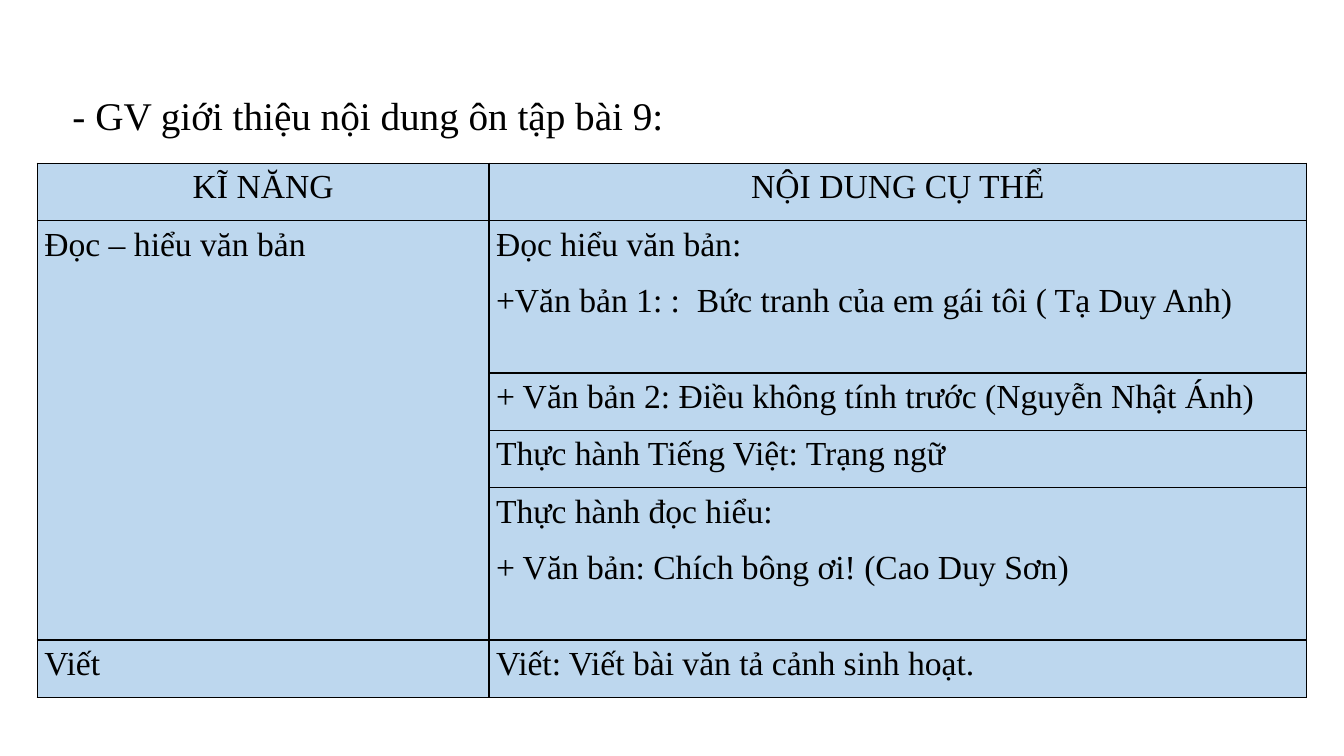
from lxml import etree
from pptx import Presentation
from pptx.dml.color import RGBColor
from pptx.enum.text import MSO_AUTO_SIZE, PP_ALIGN
from pptx.oxml.ns import qn
from pptx.util import Inches, Pt

CENTER, JUSTIFY, LEFT = PP_ALIGN.CENTER, PP_ALIGN.JUSTIFY, PP_ALIGN.LEFT
BLACK = RGBColor(0x00, 0x00, 0x00)
LIGHT_BLUE = RGBColor(0xBD, 0xD7, 0xEE)

COLUMN_WIDTHS = [4.48, 8.11]
ROW_HEIGHTS = [0.57, 1.51, 0.57, 0.57, 1.51, 0.57]
REVIEW_ROWS = [
    ([("KĨ NĂNG", CENTER)], [("NỘI DUNG CỤ THỂ", CENTER)]),
    (
        [("Đọc – hiểu văn bản", JUSTIFY)],
        [
            ("Đọc hiểu văn bản: ", JUSTIFY),
            ("+Văn bản 1: :  Bức tranh của em gái tôi ( Tạ Duy Anh)", LEFT),
        ],
    ),
    ([], [("+ Văn bản 2: Điều không tính trước (Nguyễn Nhật Ánh)", LEFT)]),
    ([], [("Thực hành Tiếng Việt: Trạng ngữ", JUSTIFY)]),
    (
        [],
        [
            ("Thực hành đọc hiểu: ", JUSTIFY),
            ("+ Văn bản: Chích bông ơi! (Cao Duy Sơn)", JUSTIFY),
        ],
    ),
    ([("Viết", JUSTIFY)], [("Viết: Viết bài văn tả cảnh sinh hoạt.", JUSTIFY)]),
]


class ReviewSlide:
    """Holds the lesson style and adds elements to one slide."""

    font_name = "Times New Roman"
    heading_size = 28
    table_size = 24

    def __init__(self, slide):
        self.slide = slide

    def add_run(self, paragraph, text, size):
        run = paragraph.add_run()
        run.text = text
        run.font.name = self.font_name
        run.font.size = Pt(size)
        run.font.color.rgb = BLACK

    def add_heading(self, text, left, top, width, height):
        shape = self.slide.shapes.add_textbox(
            Inches(left), Inches(top), Inches(width), Inches(height)
        )
        frame = shape.text_frame
        frame.word_wrap = True
        frame.auto_size = MSO_AUTO_SIZE.SHAPE_TO_FIT_TEXT
        self.add_run(frame.paragraphs[0], text, self.heading_size)

    def add_borders(self, cell):
        properties = cell._tc.get_or_add_tcPr()
        for side in ("a:lnL", "a:lnR", "a:lnT", "a:lnB"):
            line = etree.SubElement(properties, qn(side), w=str(Pt(1)))
            fill = etree.SubElement(line, qn("a:solidFill"))
            etree.SubElement(fill, qn("a:srgbClr"), val=str(BLACK))

    def fill_cell(self, cell, lines):
        self.add_borders(cell)
        cell.fill.solid()
        cell.fill.fore_color.rgb = LIGHT_BLUE
        cell.margin_left = cell.margin_right = Inches(0.07)
        cell.margin_top = cell.margin_bottom = 0
        frame = cell.text_frame
        for index, (text, alignment) in enumerate(lines):
            paragraph = frame.add_paragraph() if index else frame.paragraphs[0]
            paragraph.alignment = alignment
            paragraph.line_spacing = 1.15
            paragraph.space_after = Pt(10)
            self.add_run(paragraph, text, self.table_size)

    def add_table(self, rows, left, top, widths, heights):
        table = self.slide.shapes.add_table(
            len(heights), len(widths), Inches(left), Inches(top),
            Inches(sum(widths)), Inches(sum(heights)),
        ).table
        for column, width in zip(table.columns, widths):
            column.width = Inches(width)
        for row, height in zip(table.rows, heights):
            row.height = Inches(height)
        for row, contents in zip(table.rows, rows):
            for cell, lines in zip(row.cells, contents):
                self.fill_cell(cell, lines)
        return table


def main():
    presentation = Presentation()
    presentation.slide_width = Inches(13.33)
    presentation.slide_height = Inches(7.5)
    slide = presentation.slides.add_slide(presentation.slide_layouts[6])
    review = ReviewSlide(slide)
    review.add_heading(
        "- GV giới thiệu nội dung ôn tập bài 9:", 0.62, 0.86, 6.68, 0.57
    )
    table = review.add_table(REVIEW_ROWS, 0.37, 1.62, COLUMN_WIDTHS, ROW_HEIGHTS)
    table.cell(1, 0).merge(table.cell(4, 0))
    presentation.save("out.pptx")


if __name__ == "__main__":
    main()
